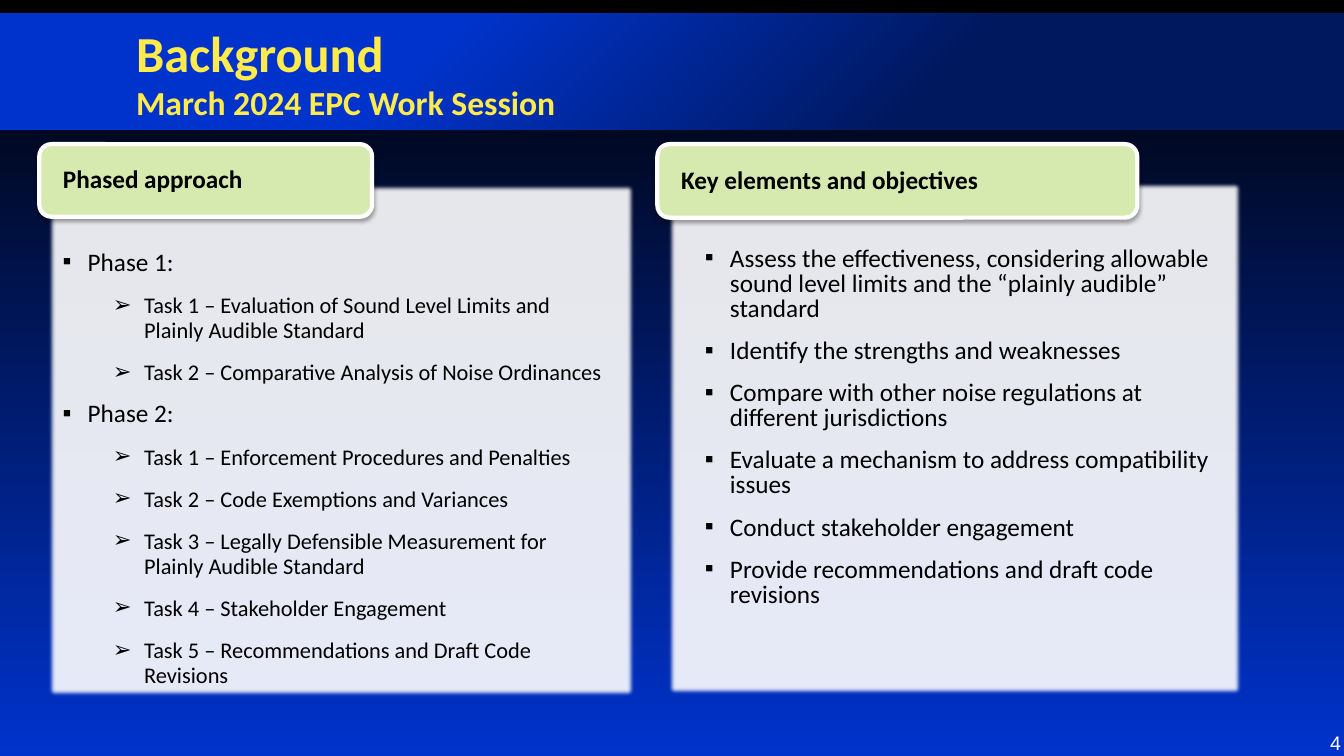
from lxml.etree import SubElement
from pptx import Presentation
from pptx.dml.color import RGBColor
from pptx.enum.shapes import MSO_SHAPE
from pptx.enum.text import MSO_ANCHOR, MSO_AUTO_SIZE, PP_ALIGN
from pptx.oxml.ns import qn
from pptx.util import Inches, Pt

COLORS = {
    "black": "000000", "blue": "0033CC", "navy": "00185E",
    "yellow": "FFEB4B", "white": "FFFFFF", "green": "D6EAAF",
}
TITLE = [("Background", 36), ("March 2024 EPC Work Session", 24)]
PAGE = "4"
# Boxes are left, top, width, height in inches; items are (level, text).
CARDS = [
    {
        "tag": "Key elements and objectives",
        "panel": (6.62, 1.8, 5.7, 5.1),
        "head": (6.52, 1.43, 4.76, 0.73),
        "list": (6.89, 2.4, 5.27, 3.72),
        "items": [
            (0, "Assess the effectiveness, considering allowable sound level "
                "limits and the “plainly audible” standard"),
            (0, "Identify the strengths and weaknesses"),
            (0, "Compare with other noise regulations at different jurisdictions"),
            (0, "Evaluate a mechanism to address compatibility issues"),
            (0, "Conduct stakeholder engagement"),
            (0, "Provide recommendations and draft code revisions"),
        ],
    },
    {
        "tag": "Phased approach",
        "panel": (0.47, 1.82, 5.83, 5.1),
        "head": (0.39, 1.43, 3.3, 0.72),
        "list": (0.52, 2.44, 5.62, 4.48),
        "items": [
            (0, "Phase 1:"),
            (1, "Task 1 – Evaluation of Sound Level Limits and Plainly Audible Standard"),
            (1, "Task 2 – Comparative Analysis of Noise Ordinances"),
            (0, "Phase 2:"),
            (1, "Task 1 – Enforcement Procedures and Penalties"),
            (1, "Task 2 – Code Exemptions and Variances"),
            (1, "Task 3 – Legally Defensible Measurement for Plainly Audible Standard"),
            (1, "Task 4 – Stakeholder Engagement"),
            (1, "Task 5 – Recommendations and Draft Code Revisions"),
        ],
    },
]
# Per list level: bullet, text indent, hanging indent, size
LEVELS = [("▪", 0.25, -0.25, 18), ("➢", 0.81, -0.31, 16)]


def rgb(name):
    return RGBColor.from_string(COLORS[name])


def style(font, size, color, bold=False, face="Calibri"):
    font.name, font.bold = face, bold
    font.color.rgb = rgb(color)
    if size:
        font.size = Pt(size)


def blend(fill, angle, stops):
    """Gradient fill; the angle runs clockwise."""
    fill.gradient()
    fill.gradient_angle = 360 - angle
    for stop, (pos, color) in zip(fill.gradient_stops, stops):
        stop.position = pos
        stop.color.rgb = rgb(color)


def place(shape, box):
    shape.left, shape.top, shape.width, shape.height = map(Inches, box)


def block(slide, kind, box):
    shape = slide.shapes.add_shape(kind, *map(Inches, box))
    shape.shadow.inherit = False
    shape.line.fill.background()
    return shape


def effect(shape, tag, **attrs):
    effects = shape._element.spPr.find(qn("a:effectLst"))
    return SubElement(effects, qn(tag), {k: str(v) for k, v in attrs.items()})


def alpha(node, percent):
    SubElement(node, qn("a:alpha"), val=str(percent * 1000))


def add_panel(slide, box):
    panel = block(slide, MSO_SHAPE.RECTANGLE, box)
    panel.fill.solid()
    panel.fill.fore_color.rgb = rgb("white")
    alpha(next(panel._element.spPr.iter(qn("a:srgbClr"))), 90)
    effect(panel, "a:softEdge", rad=Pt(2.5))


def add_head(slide, box, text):
    head = block(slide, MSO_SHAPE.ROUNDED_RECTANGLE, box)
    head.fill.solid()
    head.fill.fore_color.rgb = rgb("green")
    head.line.color.rgb = rgb("white")
    head.line.width = Pt(3)
    shade = effect(head, "a:outerShdw", blurRad=Pt(3.1), dist=Pt(1.8),
                   dir=90 * 60000, rotWithShape=0)
    alpha(SubElement(shade, qn("a:srgbClr"), val=COLORS["black"]), 35)
    frame = head.text_frame
    frame.word_wrap = True
    frame.vertical_anchor = MSO_ANCHOR.MIDDLE
    frame.margin_left = frame.margin_right = Inches(0.2)
    frame.margin_top = frame.margin_bottom = Inches(0.12)
    para = frame.paragraphs[0]
    para.text = text
    para.alignment = PP_ALIGN.LEFT
    para.line_spacing = 0.9
    style(para.font, 18, "black", True)


def fill_list(body, box, items):
    place(body, box)
    body._element.getparent().append(body._element)  # bring to front
    frame = body.text_frame
    frame.auto_size = MSO_AUTO_SIZE.NONE
    for n, (level, text) in enumerate(items):
        para = frame.add_paragraph() if n else frame.paragraphs[0]
        para.text = text
        para.level = level
        para.line_spacing = Pt(18)
        para.space_before = Pt(6 if n else 0)
        para.space_after = Pt(6)
        mark, left, hang, size = LEVELS[level]
        props = para._p.get_or_add_pPr()
        props.set("marL", str(Inches(left)))
        props.set("indent", str(Inches(hang)))
        SubElement(props, qn("a:buFont"), typeface="Arial")
        SubElement(props, qn("a:buChar"), char=mark)
        style(para.font, size, "black")


def add_title(slide):
    title = slide.shapes.title
    place(title, (1.25, 0.3, 11.72, 0.83))
    title._element.getparent().append(title._element)
    frame = title.text_frame
    frame.auto_size = MSO_AUTO_SIZE.NONE
    frame.vertical_anchor = MSO_ANCHOR.MIDDLE
    para = frame.paragraphs[0]
    para.alignment = PP_ALIGN.LEFT
    style(para.font, None, "yellow", True)
    for n, (text, size) in enumerate(TITLE):
        if n:
            para.add_line_break()
        run = para.add_run()
        run.text = text
        run.font.size = Pt(size)


def add_page(slide):
    box = slide.shapes.add_textbox(*map(Inches, (13.09, 7.2, 0.24, 0.3)))
    frame = box.text_frame
    frame.word_wrap = True
    frame.margin_left = frame.margin_right = Inches(0.03)
    para = frame.paragraphs[0]
    para.text = PAGE
    para.alignment = PP_ALIGN.RIGHT
    style(para.font, 14, "white", face="Arial")


def main():
    deck = Presentation()
    deck.slide_width, deck.slide_height = Inches(13.33), Inches(7.5)
    slide = deck.slides.add_slide(deck.slide_layouts[3])
    bodies = [p for p in slide.placeholders if p.placeholder_format.idx]
    blend(slide.background.fill, 90, [(0, "black"), (1, "blue")])
    band = block(slide, MSO_SHAPE.RECTANGLE, (0, 0.13, 13.33, 1.16))
    blend(band.fill, 45, [(0.32, "blue"), (0.69, "navy")])
    add_title(slide)
    add_page(slide)
    for card, body in zip(CARDS, reversed(bodies)):
        add_panel(slide, card["panel"])
        add_head(slide, card["head"], card["tag"])
        fill_list(body, card["list"], card["items"])
    deck.save("out.pptx")


if __name__ == "__main__":
    main()
